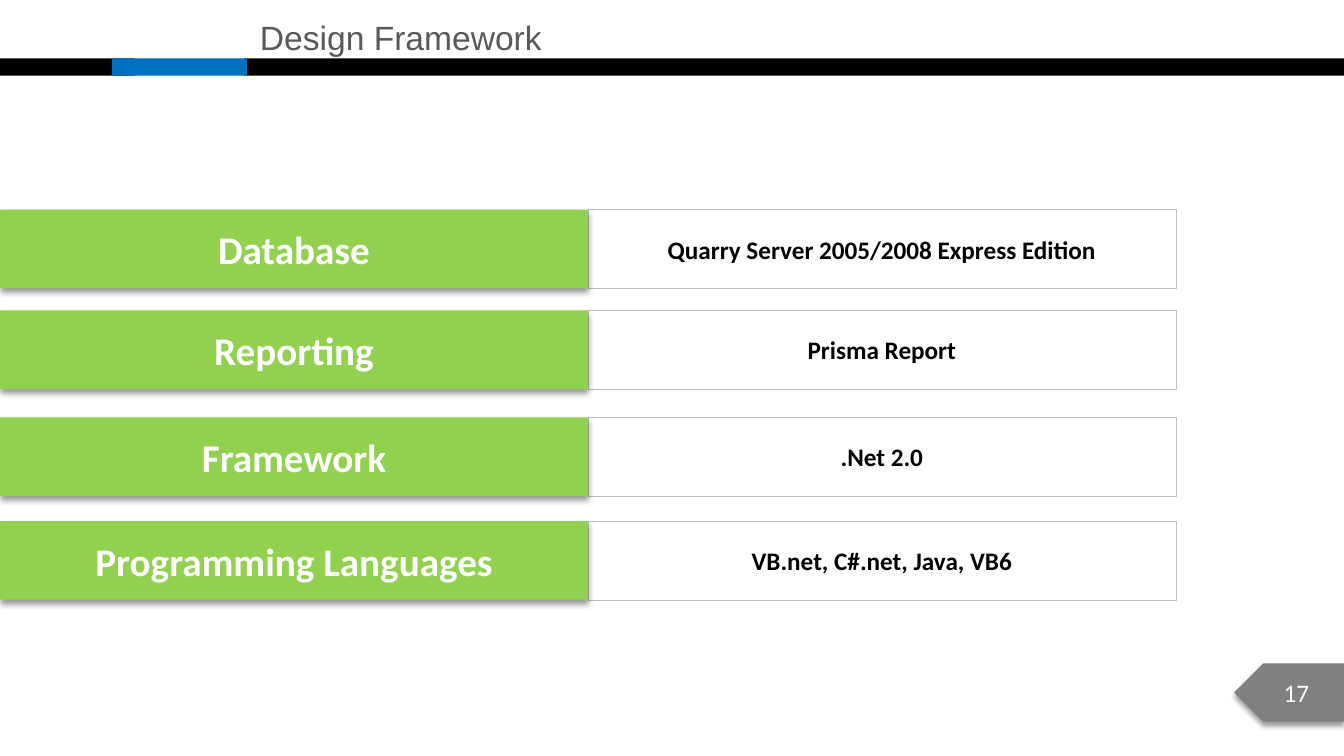
from lxml.etree import SubElement
from pptx import Presentation
from pptx.dml.color import RGBColor
from pptx.enum.shapes import MSO_SHAPE as Preset
from pptx.enum.text import MSO_ANCHOR as Anchor, MSO_AUTO_SIZE as AutoSize, PP_ALIGN as Align
from pptx.oxml.ns import qn
from pptx.util import Inches, Pt

COLORS = {
    "bar": "000000",
    "accent": "0070C0",
    "title": "595959",
    "tag": "808080",
    "label": "92D050",
    "border": "BFBFBF",
    "light": "FFFFFF",
    "dark": "000000",
}
ROWS = [
    (2.08, "Database", "Quarry Server 2005/2008 Express Edition"),
    (3.08, "Reporting", "Prisma Report"),
    (4.14, "Framework", ".Net 2.0"),
    (5.17, "Programming Languages", "VB.net, C#.net, Java, VB6"),
]


def color(name):
    return RGBColor.from_string(COLORS[name])


def style_font(font, name, size, shade, bold=False):
    font.name = name
    font.size = Pt(size)
    font.bold = bold
    font.color.rgb = color(shade)


def add_block(page, box, fill=None, border=None, preset=Preset.RECTANGLE):
    shape = page.shapes.add_shape(preset, *map(Inches, box))
    shape.shadow.inherit = False
    if fill:
        shape.fill.solid()
        shape.fill.fore_color.rgb = color(fill)
    else:
        shape.fill.background()
    if border:
        shape.line.color.rgb = color(border)
        shape.line.width = Pt(0.25)
    else:
        shape.line.fill.background()
    return shape


def add_shadow(shape):
    effects = shape._element.spPr.find(qn("a:effectLst"))
    shadow = SubElement(effects, qn("a:outerShdw"), blurRad=str(Pt(4)),
                        dist=str(Pt(3)), dir="5400000", rotWithShape="0")
    shade = SubElement(shadow, qn("a:srgbClr"), val=COLORS["dark"])
    SubElement(shade, qn("a:alpha"), val="40000")


def write(shape, text, size, shade, bold=False):
    frame = shape.text_frame
    frame.text = text
    frame.word_wrap = True
    frame.vertical_anchor = Anchor.MIDDLE
    para = frame.paragraphs[0]
    para.alignment = Align.CENTER
    style_font(para.runs[0].font, "Calibri", size, shade, bold)


def add_title(page, box, text):
    title = page.shapes.title
    title.left, title.top, title.width, title.height = map(Inches, box)
    frame = title.text_frame
    frame.text = text
    frame.word_wrap = False
    frame.auto_size = AutoSize.NONE
    frame.vertical_anchor = Anchor.TOP
    para = frame.paragraphs[0]
    para.alignment = Align.LEFT
    para.line_spacing = 1.5
    para.space_before = Pt(0)
    style_font(para.runs[0].font, "Arial", 24, "title")


def add_header_bar(page, box):
    left, top, width, height = box
    for offset, length, fill in [(0, 1.34, "bar"), (2.42, width - 2.42, "bar"),
                                 (1.11, 1.34, "accent")]:
        add_block(page, (left + offset, top, length, height), fill)


def add_page_tag(page, box, number):
    tag = add_block(page, box, "tag", preset=Preset.PENTAGON)
    tag._element.spPr.find(qn("a:xfrm")).set("flipH", "1")
    add_shadow(tag)
    write(tag, number, 18, "light")


def add_row(page, box, name, detail):
    left, top, width, height = box
    half = width / 2
    value = add_block(page, (left + half, top, half, height), border="border")
    write(value, detail, 18, "dark", True)
    label = add_block(page, (left, top, half, height), "label")
    add_shadow(label)
    write(label, name, 28, "light", True)


def main():
    deck = Presentation()
    deck.slide_width = Inches(13.34)
    deck.slide_height = Inches(7.5)
    page = deck.slides.add_slide(deck.slide_layouts[5])
    add_title(page, (2.48, -0.08, 3.03, 0.71), "Design Framework")
    add_header_bar(page, (0, 0.58, 13.34, 0.17))
    add_page_tag(page, (12.25, 6.58, 1.09, 0.58), "17")
    for top, name, detail in ROWS:
        add_row(page, (0, top, 11.67, 0.78), name, detail)
    deck.save("out.pptx")


if __name__ == "__main__":
    main()
